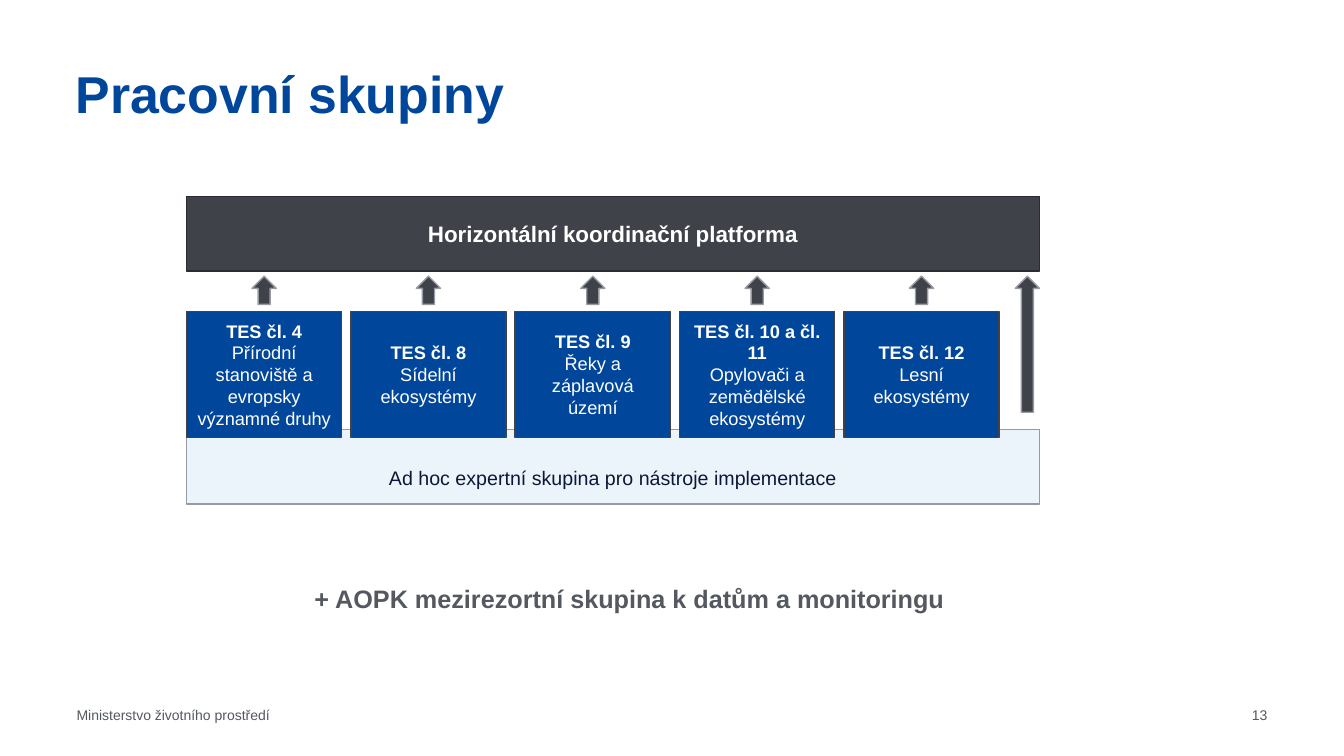
from dataclasses import dataclass

from pptx import Presentation
from pptx.dml.color import RGBColor
from pptx.enum.shapes import MSO_SHAPE as Preset
from pptx.enum.text import MSO_ANCHOR as Anchor, PP_ALIGN as Align
from pptx.shapes.autoshape import Shape
from pptx.slide import Slide
from pptx.util import Inches, Pt


@dataclass(frozen=True)
class Theme:
    font: str = "Arial"
    blue: str = "00469B"
    dark: str = "3F4248"
    dark_edge: str = "2A2C30"
    pale: str = "ECF4FB"
    edge: str = "959AA3"
    navy: str = "0C1838"
    grey: str = "545860"
    white: str = "FFFFFF"
    title_size: int = 37
    note_size: int = 18
    platform_size: int = 16
    support_size: int = 14
    group_size: int = 13
    footer_size: int = 10


@dataclass(frozen=True)
class Grid:
    """Diagram columns, in inches."""
    left: float = 1.85
    width: float = 8.46
    column: float = 1.54
    gap: float = 0.09

    def column_left(self, index: int) -> float:
        return self.left + index * (self.column + self.gap)


@dataclass(frozen=True)
class Box:
    left: float
    top: float
    width: float
    height: float


@dataclass(frozen=True)
class Line:
    text: str
    size: int
    color: str
    bold: bool = False


@dataclass(frozen=True)
class Label:
    """Free text with its place and alignment."""
    box: Box
    line: Line
    align: Align = Align.LEFT
    anchor: Anchor = Anchor.MIDDLE
    inset: tuple[float, float] = (0, 0.04)
    spacing: float = 1.0


@dataclass(frozen=True)
class Group:
    article: str
    topic: str


THEME = Theme()
GRID = Grid()

# Rows of the diagram
BAR_HEIGHT = 0.74
PLATFORM_TOP, ARROW_TOP, GROUP_TOP, SUPPORT_TOP = 1.95, 2.74, 3.09, 4.26
GROUP_HEIGHT = 1.25
ARROW_WIDTH, SHORT_ARROW, LONG_ARROW = 0.24, 0.28, 1.35

GROUPS = [
    Group("TES čl. 4", "Přírodní stanoviště a evropsky významné druhy"),
    Group("TES čl. 8", "Sídelní ekosystémy"),
    Group("TES čl. 9", "Řeky a záplavová území"),
    Group("TES čl. 10 a čl. 11", "Opylovači a zemědělské ekosystémy"),
    Group("TES čl. 12", "Lesní ekosystémy"),
]

LABELS = [
    Label(Box(0.75, 0.68, 10.83, 0.65),
          Line("Pracovní skupiny", THEME.title_size, THEME.blue, True),
          anchor=Anchor.TOP, inset=(0, 0), spacing=0.9),
    Label(Box(0.76, 6.89, 5.12, 0.4),
          Line("Ministerstvo životního prostředí", THEME.footer_size, THEME.grey)),
    Label(Box(11.57, 6.89, 1, 0.4),
          Line("13", THEME.footer_size, THEME.grey), align=Align.RIGHT),
    Label(Box(3.02, 5.74, 6.62, 0.4),
          Line("+ AOPK mezirezortní skupina k datům a monitoringu",
               THEME.note_size, THEME.grey, True),
          anchor=Anchor.TOP, inset=(0.1, 0.05)),
]


def place(box: Box) -> tuple[int, int, int, int]:
    return Inches(box.left), Inches(box.top), Inches(box.width), Inches(box.height)


def write(shape: Shape, lines: list[Line], align: Align, anchor: Anchor,
          spacing: float = 1.0) -> None:
    frame = shape.text_frame
    frame.word_wrap = True
    frame.vertical_anchor = anchor
    for index, line in enumerate(lines):
        paragraph = frame.add_paragraph() if index else frame.paragraphs[0]
        paragraph.alignment = align
        paragraph.line_spacing = spacing
        run = paragraph.add_run()
        run.text = line.text
        run.font.name = THEME.font
        run.font.size = Pt(line.size)
        run.font.bold = line.bold
        run.font.color.rgb = RGBColor.from_string(line.color)


def add_label(slide: Slide, label: Label) -> None:
    shape = slide.shapes.add_textbox(*place(label.box))
    frame = shape.text_frame
    frame.margin_left = frame.margin_right = Inches(label.inset[0])
    frame.margin_top = frame.margin_bottom = Inches(label.inset[1])
    write(shape, [label.line], label.align, label.anchor, label.spacing)


def add_block(slide: Slide, preset: Preset, box: Box, fill: str, edge: str) -> Shape:
    shape = slide.shapes.add_shape(preset, *place(box))
    shape.shadow.inherit = False
    shape.fill.solid()
    shape.fill.fore_color.rgb = RGBColor.from_string(fill)
    shape.line.color.rgb = RGBColor.from_string(edge)
    shape.line.width = Pt(1)
    return shape


def add_bar(slide: Slide, top: float, fill: str, edge: str, line: Line) -> Shape:
    shape = add_block(slide, Preset.RECTANGLE,
                      Box(GRID.left, top, GRID.width, BAR_HEIGHT), fill, edge)
    write(shape, [line], Align.CENTER, Anchor.MIDDLE)
    return shape


def add_arrow(slide: Slide, left: float, height: float) -> None:
    add_block(slide, Preset.UP_ARROW, Box(left, ARROW_TOP, ARROW_WIDTH, height),
              THEME.dark, THEME.edge)


def add_group(slide: Slide, index: int, group: Group) -> None:
    left = GRID.column_left(index)
    shape = add_block(slide, Preset.RECTANGLE,
                      Box(left, GROUP_TOP, GRID.column, GROUP_HEIGHT),
                      THEME.blue, THEME.dark)
    write(shape, [Line(group.article, THEME.group_size, THEME.white, True),
                  Line(group.topic, THEME.group_size, THEME.white)],
          Align.CENTER, Anchor.MIDDLE)
    add_arrow(slide, left + (GRID.column - ARROW_WIDTH) / 2, SHORT_ARROW)


def main() -> None:
    presentation = Presentation()
    presentation.slide_width = Inches(13.33)
    presentation.slide_height = Inches(7.5)
    slide = presentation.slides.add_slide(presentation.slide_layouts[6])

    # Title, footer and closing note
    for label in LABELS:
        add_label(slide, label)

    # Supporting bar, its text lowered clear of the working groups
    support = add_bar(slide, SUPPORT_TOP, THEME.pale, THEME.edge,
                      Line("Ad hoc expertní skupina pro nástroje implementace",
                           THEME.support_size, THEME.navy))
    support.text_frame.margin_top = Inches(0.27)

    # Coordination platform
    add_bar(slide, PLATFORM_TOP, THEME.dark, THEME.dark_edge,
            Line("Horizontální koordinační platforma",
                 THEME.platform_size, THEME.white, True))

    # Working groups and the arrows to the platform
    for index, group in enumerate(GROUPS):
        add_group(slide, index, group)
    add_arrow(slide, GRID.left + GRID.width - ARROW_WIDTH, LONG_ARROW)

    presentation.save("out.pptx")


if __name__ == "__main__":
    main()
